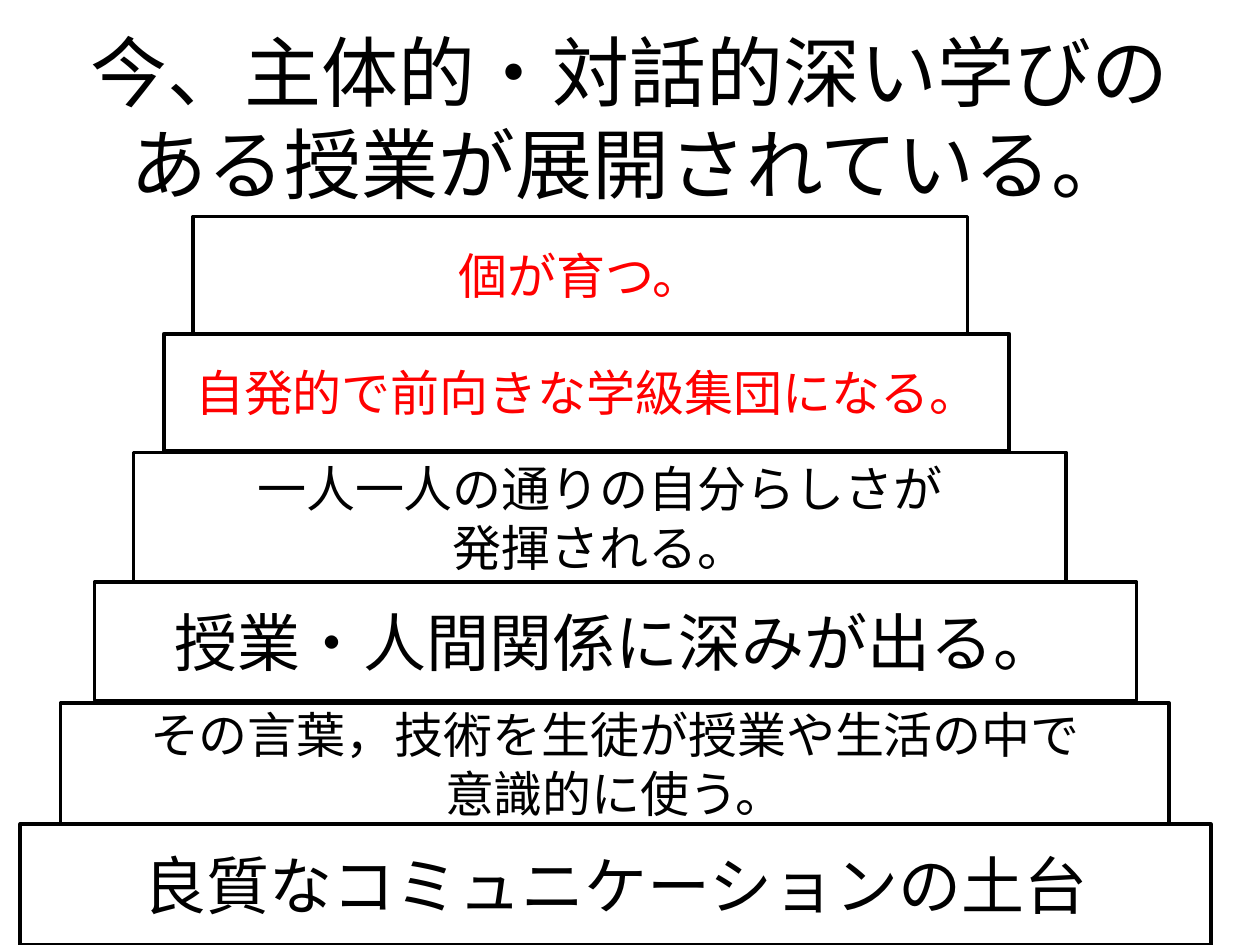
from dataclasses import dataclass

from lxml import etree
from pptx import Presentation
from pptx import util as u
from pptx.dml.color import RGBColor
from pptx.enum import shapes, text
from pptx.oxml.ns import qn


@dataclass(frozen=True)
class Theme:
    font: str = "Noto Sans CJK JP"
    ink: str = "000000"
    accent: str = "FF0000"
    paper: str = "FFFFFF"
    title: int = 44
    large: int = 36
    medium: int = 28
    outline: int = 2


class SlideBuilder:
    """Places elements by shares of the slide's width and height."""

    def __init__(self, presentation, theme):
        self.presentation = presentation
        self.theme = theme
        self.slide = presentation.slides.add_slide(presentation.slide_layouts[5])

    def box(self, left, top, width, height):
        across, down = self.presentation.slide_width, self.presentation.slide_height
        return (round(left * across), round(top * down),
                round(width * across), round(height * down))

    def set_text(self, shape, content, size, color):
        frame = shape.text_frame
        frame.text = content
        frame.word_wrap = True
        frame.auto_size = text.MSO_AUTO_SIZE.NONE
        frame.vertical_anchor = text.MSO_ANCHOR.MIDDLE
        for paragraph in frame.paragraphs:
            paragraph.alignment = text.PP_ALIGN.CENTER
            font = paragraph.font
            font.name = self.theme.font
            font.size = u.Pt(size)
            font.color.rgb = RGBColor.from_string(color)
            # East Asian glyphs take their typeface from a:ea
            defaults = paragraph._p.pPr.find(qn("a:defRPr"))
            etree.SubElement(defaults, qn("a:ea"), typeface=self.theme.font)

    def title(self, content, *area):
        shape = self.slide.shapes.title
        shape.left, shape.top, shape.width, shape.height = self.box(*area)
        self.set_text(shape, content, self.theme.title, self.theme.ink)

    def step(self, content, size, color, *area):
        shape = self.slide.shapes.add_shape(shapes.MSO_SHAPE.RECTANGLE, *self.box(*area))
        shape.shadow.inherit = False
        shape.fill.solid()
        shape.fill.fore_color.rgb = RGBColor.from_string(self.theme.paper)
        shape.line.color.rgb = RGBColor.from_string(self.theme.ink)
        shape.line.width = u.Pt(self.theme.outline)
        self.set_text(shape, content, size, color)


def main():
    presentation = Presentation()
    presentation.slide_width, presentation.slide_height = u.Inches(10), u.Inches(7.5)
    theme = Theme()
    builder = SlideBuilder(presentation, theme)
    builder.title("今、主体的・対話的深い学びの\vある授業が展開されている。", 0.05, 0.04, 0.9, 1 / 6)

    # From the foundation up: text, size, colour, left, width, top, height (percent)
    steps = [
        ("良質なコミュニケーションの土台", theme.large, theme.ink, 1.6, 94.5, 87.2, 12.8),
        ("その言葉，技術を生徒が授業や生活の中で\n意識的に使う。",
         theme.medium, theme.ink, 4.8, 88, 74.4, 12.8),
        ("授業・人間関係に深みが出る。", theme.large, theme.ink, 7.5, 82.7, 61.6, 12.53),
        ("一人一人の通りの自分らしさが\n発揮される。",
         theme.medium, theme.ink, 10.6, 74, 47.87, 13.73),
        ("自発的で前向きな学級集団になる。", theme.medium, theme.accent, 13, 67.1, 35.33, 12.4),
        ("個が育つ。", theme.medium, theme.accent, 15.3, 61.5, 22.93, 12.4),
    ]
    for content, size, color, left, width, top, height in steps:
        builder.step(content, size, color, left / 100, top / 100, width / 100, height / 100)

    presentation.save("out.pptx")


if __name__ == "__main__":
    main()
